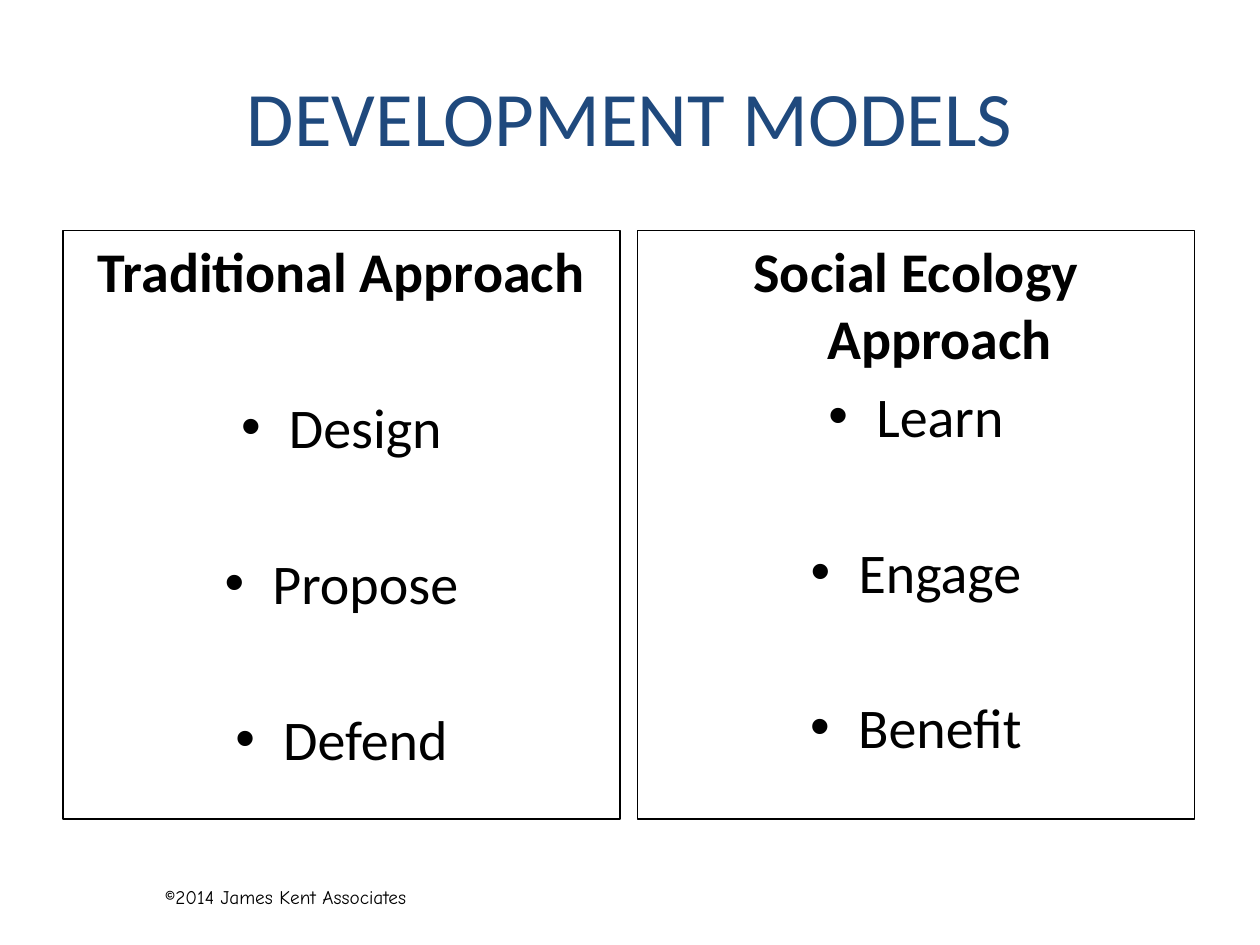
from lxml import etree
from pptx import Presentation
from pptx import util as u
from pptx.dml.color import RGBColor
from pptx.enum import shapes, text
from pptx.oxml.ns import qn

COLOURS = {"title": "1F497D", "ink": "000000"}
FORMATS = {
    "title": {"name": "Calibri", "size": u.Pt(44), "bold": False},
    "heading": {"name": "Calibri", "size": u.Pt(32), "bold": True},
    "item": {"name": "Calibri", "size": u.Pt(32), "bold": False},
    "footer": {"name": "Comic Neue", "size": u.Pt(11), "bold": False},
}
MODELS = [
    ("Traditional Approach", ["Design", "Propose", "Defend"], 50.6),
    ("Social Ecology Approach", ["Learn", "Engage", "Benefit"], 5.8),
]
ITEM_GAP = 50.6


def write(para, words, style, colour="ink"):
    """Write words into a paragraph in a named format."""
    span = para.add_run()
    span.text = words
    for name, value in FORMATS[style].items():
        setattr(span.font, name, value)
    span.font.color.rgb = RGBColor.from_string(COLOURS[colour])


def hang(para, bullet=None):
    """Centre a paragraph with a hanging indent and an optional bullet."""
    props = para._p.get_or_add_pPr()
    props.set("marL", str(u.Inches(0.38)))
    props.set("indent", str(-u.Inches(0.38)))
    if bullet:
        etree.SubElement(props, qn("a:buFont")).set("typeface", "Arial")
        etree.SubElement(props, qn("a:buChar")).set("char", bullet)
    para.alignment = text.PP_ALIGN.CENTER


def add_label(page, bounds, words, style, colour, alignment):
    """Place a single line of text in the given bounds."""
    box = page.shapes.add_textbox(*map(u.Inches, bounds))
    box.text_frame.word_wrap = True
    para = box.text_frame.paragraphs[0]
    para.alignment = alignment
    write(para, words, style, colour)


def add_model(page, bounds, heading, items, first_gap):
    """Place an outlined panel with a heading and its bulleted steps."""
    panel = page.shapes.add_shape(shapes.MSO_SHAPE.RECTANGLE, *map(u.Inches, bounds))
    panel.shadow.inherit = False
    panel.fill.background()
    panel.line.color.rgb = RGBColor.from_string(COLOURS["ink"])
    panel.line.width = u.Pt(1)
    frame = panel.text_frame
    frame.word_wrap = True
    frame.vertical_anchor = text.MSO_ANCHOR.TOP
    hang(frame.paragraphs[0])
    write(frame.paragraphs[0], heading, "heading")
    for index, item in enumerate(items):
        para = frame.add_paragraph()
        hang(para, "•")
        para.space_before = u.Pt(ITEM_GAP if index else first_gap)
        write(para, item, "item")


def main():
    """Build and save the slide."""
    deck = Presentation()
    deck.slide_width, deck.slide_height = u.Inches(10), u.Inches(7.5)
    page = deck.slides.add_slide(deck.slide_layouts[6])
    add_label(page, (0.5, 0.5, 9, 1.5), "DEVELOPMENT MODELS", "title", "title",
              text.PP_ALIGN.CENTER)
    for column, model in enumerate(MODELS):
        add_model(page, (0.5 + column * 4.56, 1.83, 4.42, 4.67), *model)
    add_label(page, (1.21, 6.98, 2.44, 0.28), "©2014 James Kent Associates", "footer",
              "ink", text.PP_ALIGN.LEFT)
    deck.save("out.pptx")


if __name__ == "__main__":
    main()
